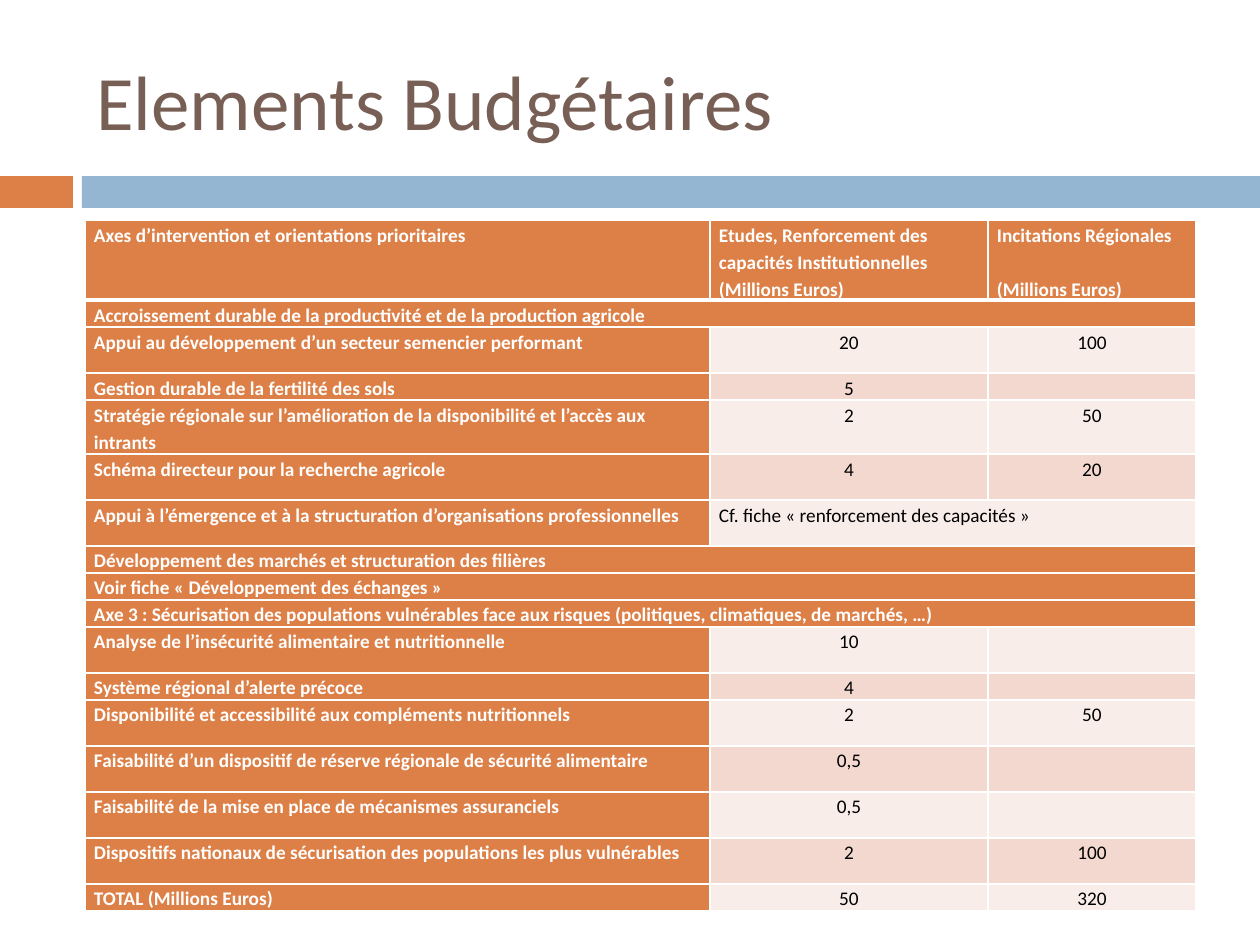
import pptx
import pptx.util
import pptx.dml.color
import pptx.enum.shapes
import pptx.enum.text
import pptx.oxml.ns
from lxml import etree

RGBColor = pptx.dml.color.RGBColor
ORANGE = RGBColor(0xDD, 0x80, 0x47)
BLUE = RGBColor(0x94, 0xB6, 0xD2)
BROWN = RGBColor(0x77, 0x5F, 0x55)
LIGHT = RGBColor(0xF9, 0xED, 0xE9)
DARK = RGBColor(0xF2, 0xD8, 0xCF)
WHITE = RGBColor(0xFF, 0xFF, 0xFF)
BLACK = RGBColor(0x00, 0x00, 0x00)
FONT = "Calibri"

# Content
TITLE = "Elements Budgétaires"
HEADER = [
    ["Axes d’intervention et orientations prioritaires"],
    ["Etudes, Renforcement des capacités Institutionnelles", "(Millions Euros)"],
    ["Incitations Régionales", "(Millions Euros)"],
]
HEADER_HEIGHT = 79
SHORT, TALL, DOUBLE = 27, 46, 54
# Row height, then the cells; a row with fewer than three cells
# stretches its last one to the right edge
ROWS = [
    (SHORT, "Accroissement durable de la productivité et de la production agricole"),
    (TALL, "Appui au développement d’un secteur semencier performant", "20", "100"),
    (SHORT, "Gestion durable de la fertilité des sols", "5", ""),
    (DOUBLE, "Stratégie régionale sur l’amélioration de la disponibilité et l’accès aux intrants",
     "2", "50"),
    (TALL, "Schéma directeur pour la recherche agricole", "4", "20"),
    (TALL, "Appui à l’émergence et à la structuration d’organisations professionnelles",
     "Cf. fiche « renforcement des capacités »"),
    (SHORT, "Développement des marchés et structuration des filières"),
    (SHORT, "Voir fiche « Développement des échanges »"),
    (SHORT, "Axe 3 : Sécurisation des populations vulnérables face aux risques "
            "(politiques, climatiques, de marchés, …)"),
    (TALL, "Analyse de l’insécurité alimentaire et nutritionnelle", "10", ""),
    (SHORT, "Système régional d’alerte précoce", "4", ""),
    (TALL, "Disponibilité et accessibilité aux compléments nutritionnels", "2", "50"),
    (TALL, "Faisabilité d’un dispositif de réserve régionale de sécurité alimentaire", "0,5", ""),
    (TALL, "Faisabilité de la mise en place de mécanismes assuranciels", "0,5", ""),
    (TALL, "Dispositifs nationaux de sécurisation des populations les plus vulnérables",
     "2", "100"),
    (SHORT, "TOTAL (Millions Euros)", "50", "320"),
]
COLUMN_WIDTHS = [625, 278, 208]
BARS = [((0, 176, 73, 32), ORANGE), ((82, 176, 1178, 32), BLUE)]


def px(length):
    return pptx.util.Emu(round(length * 914400 / 126))


def add_text(para, text, size, color, bold=False):
    span = para.add_run()
    span.text = text
    span.font.name = FONT
    span.font.size = pptx.util.Pt(size)
    span.font.bold = bold
    span.font.color.rgb = color


def style_cell(cell, fill, top, bottom):
    cell.margin_left = cell.margin_right = px(9)
    cell.margin_top = cell.margin_bottom = 0
    properties = cell._tc.get_or_add_tcPr()
    for side, points in (("L", 1), ("R", 1), ("T", top), ("B", bottom)):
        line = etree.SubElement(properties, pptx.oxml.ns.qn("a:ln" + side),
                                w=str(pptx.util.Pt(points)))
        solid = etree.SubElement(line, pptx.oxml.ns.qn("a:solidFill"))
        etree.SubElement(solid, pptx.oxml.ns.qn("a:srgbClr"), val=str(WHITE))
    cell.fill.solid()
    cell.fill.fore_color.rgb = fill


def fill_cell(cell, lines, color, bold, centred=False):
    for index, text in enumerate(lines):
        para = cell.text_frame.paragraphs[0] if index == 0 else cell.text_frame.add_paragraph()
        para.line_spacing = 1.15
        if centred:
            para.alignment = pptx.enum.text.PP_ALIGN.CENTER
        if text:
            add_text(para, text, 11, color, bold)
        else:
            # Keeps an empty cell as low as its neighbours
            para._p.get_or_add_endParaRPr().set("sz", "1100")


def main():
    deck = pptx.Presentation()
    deck.slide_width, deck.slide_height = px(1260), px(945)
    page = deck.slides.add_slide(deck.slide_layouts[6])

    # Bars under the title
    for place, color in BARS:
        bar = page.shapes.add_shape(pptx.enum.shapes.MSO_SHAPE.RECTANGLE, *map(px, place))
        bar.shadow.inherit = False
        bar.fill.solid()
        bar.fill.fore_color.rgb = color
        bar.line.fill.background()

    # Title
    box = page.shapes.add_textbox(px(84), px(32), px(1124), px(136))
    box.text_frame.word_wrap = True
    box.text_frame.vertical_anchor = pptx.enum.text.MSO_ANCHOR.MIDDLE
    add_text(box.text_frame.paragraphs[0], TITLE, 44, BROWN)

    # Budget table
    heights = [HEADER_HEIGHT] + [row[0] for row in ROWS]
    table = page.shapes.add_table(len(heights), len(COLUMN_WIDTHS), px(85), px(220),
                                  px(sum(COLUMN_WIDTHS)), px(sum(heights))).table
    for column, width in zip(table.columns, COLUMN_WIDTHS):
        column.width = px(width)
    for row, height in zip(table.rows, heights):
        row.height = px(height)

    for column, lines in enumerate(HEADER):
        cell = table.cell(0, column)
        style_cell(cell, ORANGE, 1, 3)
        fill_cell(cell, lines, WHITE, True)
    # The last heading leaves one line free above its unit
    table.cell(0, 2).text_frame.paragraphs[1].space_before = pptx.util.Pt(15.4)

    last = len(COLUMN_WIDTHS) - 1
    for number, (_, *texts) in enumerate(ROWS, start=1):
        band = DARK if number % 2 else LIGHT
        stretched = len(texts) - 1
        for column in range(last + 1):
            is_label = min(column, stretched) == 0
            style_cell(table.cell(number, column), ORANGE if is_label else band,
                       3 if number == 1 else 1, 1)
        if stretched < last:
            table.cell(number, stretched).merge(table.cell(number, last))
        for column, text in enumerate(texts):
            is_label = column == 0
            fill_cell(table.cell(number, column), [text], WHITE if is_label else BLACK,
                      is_label, centred=not is_label and stretched == last)

    deck.save("out.pptx")


if __name__ == "__main__":
    main()
